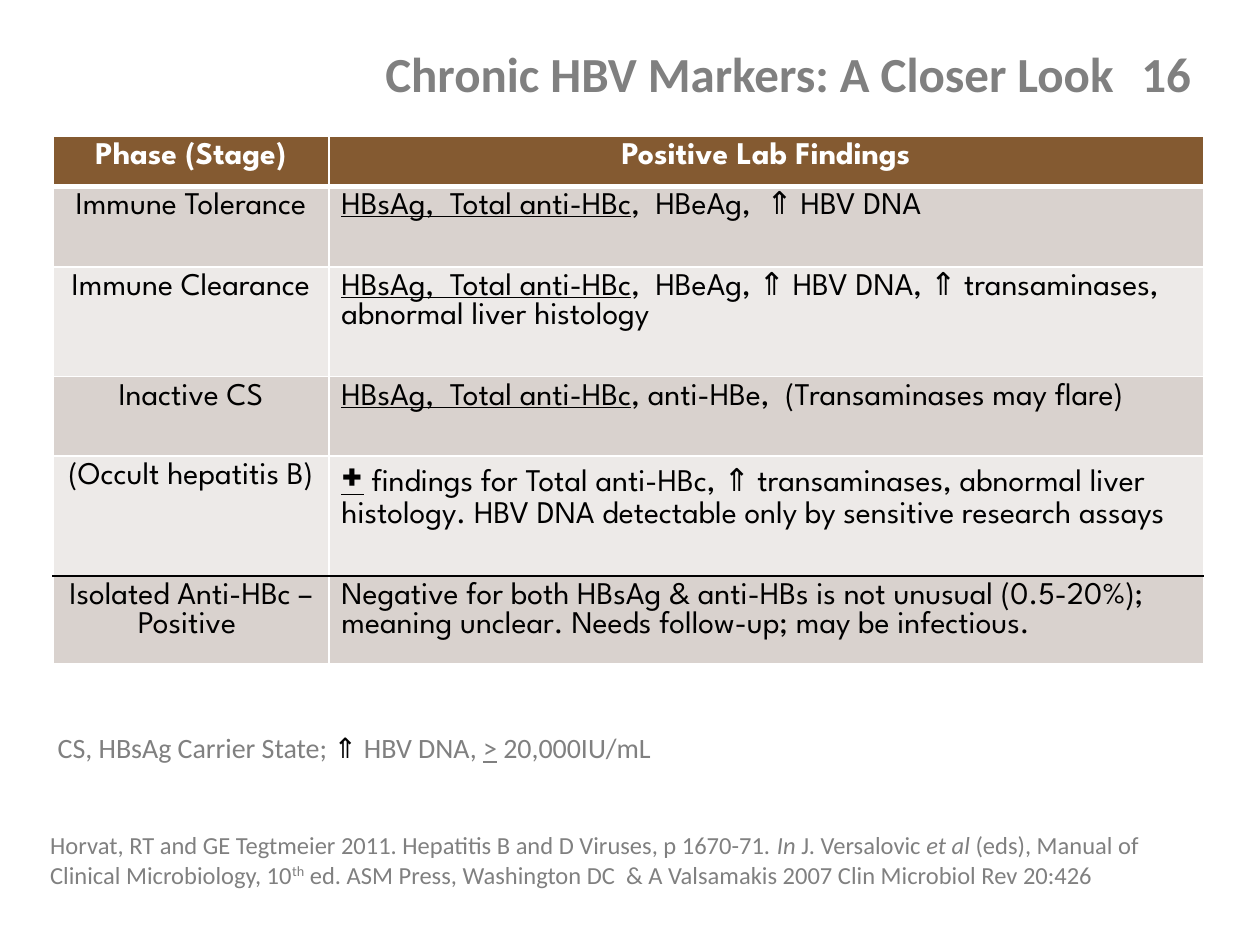
from typing import NamedTuple

from lxml.etree import SubElement
from pptx import Presentation
from pptx.dml.color import RGBColor
from pptx.enum.text import MSO_ANCHOR as Anchor, PP_ALIGN as Align
from pptx.oxml.ns import qn
from pptx.util import Inches, Pt

WIDTH, HEIGHT = 10, 7.5
BODY, TABLE_FONT = "Calibri", "League Spartan"
GRAY, BLACK, WHITE, BROWN = "808080", "000000", "FFFFFF", "845A31"
BANDS = ("D9D2CE", "EDEAE8")
COLUMN_WIDTHS = (2.19, 6.94)


class Run(NamedTuple):
    text: str
    format: dict = {}


class Row(NamedTuple):
    height: float
    phase: str
    findings: list[Run]


class Box(NamedTuple):
    """Position and size as shares of the slide."""
    left: float
    top: float
    width: float
    height: float


MARKERS = Run("HBsAg,  Total anti-HBc", {"underline": True})
ROWS = [
    Row(0.4, "Phase (Stage)", [Run("Positive Lab Findings")]),
    Row(0.64, "Immune Tolerance", [MARKERS, Run(",  HBeAg,  ⇑ HBV DNA")]),
    Row(0.87, "Immune Clearance", [MARKERS, Run(
        ",  HBeAg, ⇑ HBV DNA, ⇑ transaminases, abnormal liver histology")]),
    Row(0.63, "Inactive CS", [MARKERS, Run(", anti-HBe,  (Transaminases may flare)")]),
    Row(0.95, "(Occult hepatitis B)", [
        Run("+", {"size": 24, "bold": True, "underline": True}),
        Run(" findings for Total anti-HBc, ⇑ transaminases, abnormal liver histology. "
            "HBV DNA detectable only by sensitive research assays")]),
    Row(0.55, "Isolated Anti-HBc – Positive ", [Run(
        "Negative for both HBsAg & anti-HBs is not unusual (0.5-20%); "
        "meaning unclear. Needs follow-up; may be infectious.")]),
]
# Rules between rows, from the top edge to the bottom edge: colour and points
RULES = [(WHITE, 1), (WHITE, 3), (WHITE, 1), (WHITE, 1), (WHITE, 1), (BLACK, 1), (WHITE, 1)]

ITALIC = {"italic": True}
LEGEND = [
    Run("CS, HBsAg Carrier State; "),
    Run("⇑ ", {"name": TABLE_FONT, "color": BLACK}),
    Run("HBV DNA, "), Run(">", {"underline": True}), Run(" 20,000IU/mL"),
]
CITATION = [
    Run("Horvat, RT and GE Tegtmeier 2011. Hepatitis B and D Viruses, p 1670-71. "),
    Run("In", ITALIC), Run(" J. Versalovic "), Run("et al ", ITALIC),
    Run("(eds), Manual of Clinical Microbiology, 10"), Run("th", {"baseline": 30000}),
    Run(" ed. ASM Press, Washington DC  & A Valsamakis 2007 Clin Microbiol Rev 20:426"),
]


def color(value: str) -> RGBColor:
    return RGBColor.from_string(value)


def write(paragraph, runs: list[Run], base: dict, align=Align.LEFT) -> None:
    paragraph.alignment = align
    for item in runs:
        run = paragraph.add_run()
        run.text = item.text
        for key, value in {**base, **item.format}.items():
            if key == "color":
                run.font.color.rgb = color(value)
            elif key == "baseline":
                run.font._element.set("baseline", str(value))
            else:
                setattr(run.font, key, Pt(value) if key == "size" else value)


def add_text(slide, box: Box, runs: list[Run], base: dict,
             align=Align.LEFT, anchor=Anchor.TOP) -> None:
    shape = slide.shapes.add_textbox(
        Inches(box.left * WIDTH), Inches(box.top * HEIGHT),
        Inches(box.width * WIDTH), Inches(box.height * HEIGHT))
    frame = shape.text_frame
    frame.word_wrap = True
    frame.vertical_anchor = anchor
    write(frame.paragraphs[0], runs, {"name": BODY, "color": GRAY, **base}, align)


def set_borders(cell, top: tuple, bottom: tuple) -> None:
    side = (WHITE, 1)
    properties = cell._tc.get_or_add_tcPr()
    for edge, (line_color, points) in zip("LRTB", (side, side, top, bottom)):
        line = SubElement(properties, qn(f"a:ln{edge}"), w=str(Pt(points)))
        fill = SubElement(line, qn("a:solidFill"))
        SubElement(fill, qn("a:srgbClr"), val=line_color)


def add_marker_table(slide, left: float, top: float) -> None:
    table = slide.shapes.add_table(
        len(ROWS), len(COLUMN_WIDTHS), Inches(left), Inches(top),
        Inches(sum(COLUMN_WIDTHS)), Inches(sum(row.height for row in ROWS))).table
    for column, width in zip(table.columns, COLUMN_WIDTHS):
        column.width = Inches(width)
    for index, row in enumerate(ROWS):
        header = index == 0
        table.rows[index].height = Inches(row.height)
        base = {"name": TABLE_FONT, "size": 18, "bold": header,
                "color": WHITE if header else BLACK}
        for column, runs in enumerate(([Run(row.phase)], row.findings)):
            cell = table.cell(index, column)
            set_borders(cell, RULES[index], RULES[index + 1])
            cell.fill.solid()
            cell.fill.fore_color.rgb = color(BROWN if header else BANDS[(index - 1) % 2])
            centered = header or column == 0
            write(cell.text_frame.paragraphs[0], runs, base,
                  Align.CENTER if centered else Align.LEFT)


def main() -> None:
    presentation = Presentation()
    presentation.slide_width, presentation.slide_height = Inches(WIDTH), Inches(HEIGHT)
    slide = presentation.slides.add_slide(presentation.slide_layouts[6])
    slide.background.fill.solid()
    slide.background.fill.fore_color.rgb = color(WHITE)

    # Title with the slide number
    add_text(slide, Box(0.053, 0.03, 0.902, 0.085),
             [Run("Chronic HBV Markers: A Closer Look\t16")],
             {"size": 28, "bold": True}, Align.RIGHT, Anchor.BOTTOM)
    # Phases and their findings
    add_marker_table(slide, 0.42, 1.08)
    # Citation and legend
    add_text(slide, Box(0.03, 0.872, 0.9, 0.076), CITATION, {"size": 14})
    add_text(slide, Box(0.036, 0.767, 0.888, 0.05), LEGEND, {"size": 16})
    presentation.save("out.pptx")


if __name__ == "__main__":
    main()
